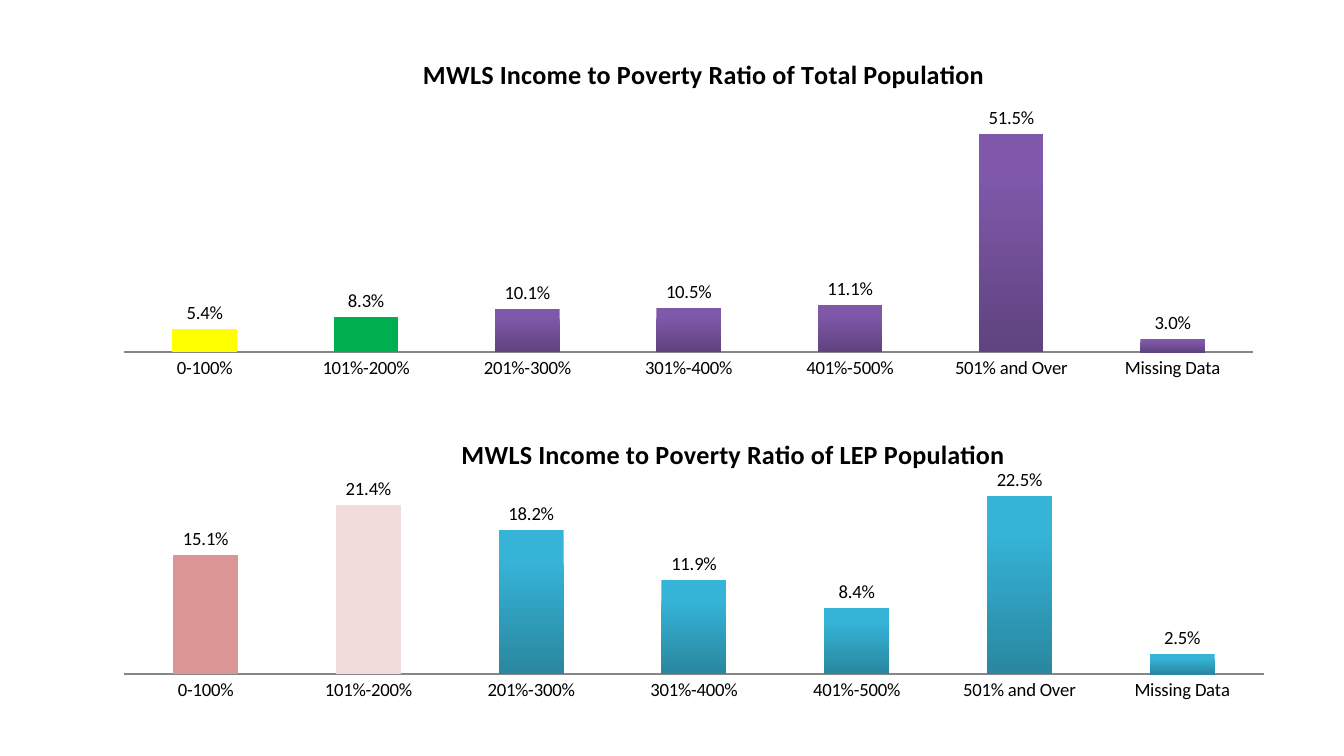
from dataclasses import dataclass

from pptx import Presentation
from pptx.chart.data import CategoryChartData
from pptx.dml.color import RGBColor
from pptx.enum.chart import XL_CHART_TYPE as ChartType
from pptx.enum.chart import XL_LABEL_POSITION as LabelPosition
from pptx.enum.chart import XL_TICK_MARK as TickMark
from pptx.oxml import parse_xml
from pptx.oxml.ns import nsdecls, qn
from pptx.util import Cm, Pt


@dataclass(frozen=True)
class Theme:
    font: str = "Calibri"
    text: str = "000000"
    axis: str = "868686"
    label_size: int = 10
    title_size: int = 14
    total_bars: tuple = ("7F58A9", "5F437F")
    total_accents: tuple = ("FFFF00", "00B050")
    lep_bars: tuple = ("35B4D8", "2A879F")
    lep_accents: tuple = ("D99694", "F2DCDB")


class SlideBuilder:
    def __init__(self, slide, theme):
        self.slide = slide
        self.theme = theme

    def style_font(self, font, size, bold=False):
        font.name = self.theme.font
        font.size = Pt(size)
        font.bold = bold
        font.color.rgb = RGBColor.from_string(self.theme.text)

    def set_layout(self, parent, index, target="", **fractions):
        old_layout = parent.find(qn("c:layout"))
        if old_layout is not None:
            parent.remove(old_layout)
        modes = "".join(f'<c:{axis}Mode val="edge"/>' for axis in "xy")
        values = "".join(f'<c:{key} val="{value}"/>' for key, value in fractions.items())
        parent.insert(index, parse_xml(
            f'<c:layout {nsdecls("c")}><c:manualLayout>'
            f"{target}{modes}{values}</c:manualLayout></c:layout>"))

    def add_title(self, chart, title, x, y):
        paragraph = chart.chart_title.text_frame.paragraphs[0]
        paragraph.text = title
        self.style_font(paragraph.font, self.theme.title_size, bold=True)
        chart.chart_title.include_in_layout = False
        self.set_layout(chart.chart_title._element, 1, x=x, y=y)

    def style_axes(self, chart, maximum):
        brackets = chart.category_axis
        brackets.major_tick_mark = TickMark.NONE
        brackets.format.line.color.rgb = RGBColor.from_string(self.theme.axis)
        brackets.format.line.width = Pt(0.75)
        shares = chart.value_axis
        shares.minimum_scale = 0
        shares.maximum_scale = maximum
        shares.has_major_gridlines = False
        shares.visible = False

    def style_bars(self, plot, bar_colors, accents):
        plot.gap_width = 150
        plot.overlap = -25
        plot.vary_by_categories = False
        bars = plot.series[0]
        bars.invert_if_negative = False
        fill = bars.format.fill
        fill.gradient()
        fill.gradient_angle = 270
        for stop, color, position in zip(fill.gradient_stops, bar_colors, (0.2, 1)):
            stop.color.rgb = RGBColor.from_string(color)
            stop.position = position
        for index, accent in enumerate(accents):
            accent_fill = bars.points[index].format.fill
            accent_fill.solid()
            accent_fill.fore_color.rgb = RGBColor.from_string(accent)

    def label_bars(self, plot):
        plot.has_data_labels = True
        labels = plot.data_labels
        labels.show_value = True
        labels.number_format = "0.0%"
        labels.number_format_is_linked = False
        labels.position = LabelPosition.OUTSIDE_END
        self.style_font(labels.font, self.theme.label_size)

    def add_ratio_chart(self, title, shares, box, title_at, plot_y, plot_h,
                        maximum, bar_colors, accents):
        data = CategoryChartData(number_format="0.0%")
        data.categories = INCOME_BRACKETS
        data.add_series("Series 1", shares)
        chart = self.slide.shapes.add_chart(
            ChartType.COLUMN_CLUSTERED, *map(Cm, box), data).chart
        chart.has_legend = False
        self.style_font(chart.font, self.theme.label_size)
        self.add_title(chart, title, *title_at)
        self.style_axes(chart, maximum)
        self.style_bars(chart.plots[0], bar_colors, accents)
        self.label_bars(chart.plots[0])
        self.set_layout(chart._chartSpace.chart.plotArea, 0,
                        '<c:layoutTarget val="inner"/>',
                        x=0.02, y=plot_y, w=0.96, h=plot_h)


INCOME_BRACKETS = ["0-100%", "101%-200%", "201%-300%", "301%-400%",
                   "401%-500%", "501% and Over", "Missing Data"]
TOTAL_SHARES = [0.054, 0.083, 0.101, 0.105, 0.111, 0.515, 0.03]
LEP_SHARES = [0.151, 0.214, 0.182, 0.119, 0.084, 0.225, 0.025]


def main():
    presentation = Presentation()
    presentation.slide_width = Cm(25.4)
    presentation.slide_height = Cm(14.29)
    theme = Theme()
    slide = presentation.slides.add_slide(presentation.slide_layouts[6])
    builder = SlideBuilder(slide, theme)
    builder.add_ratio_chart(
        "MWLS Income to Poverty Ratio of Total Population", TOTAL_SHARES,
        box=(1.9, 0.58, 22.23, 6.68), title_at=(0.27, 0.06),
        plot_y=0.19, plot_h=0.72, maximum=0.6,
        bar_colors=theme.total_bars, accents=theme.total_accents)
    builder.add_ratio_chart(
        "MWLS Income to Poverty Ratio of LEP Population", LEP_SHARES,
        box=(1.9, 7.77, 22.43, 5.59), title_at=(0.3, 0.07),
        plot_y=0.22, plot_h=0.67, maximum=0.25,
        bar_colors=theme.lep_bars, accents=theme.lep_accents)
    presentation.save("out.pptx")


if __name__ == "__main__":
    main()
